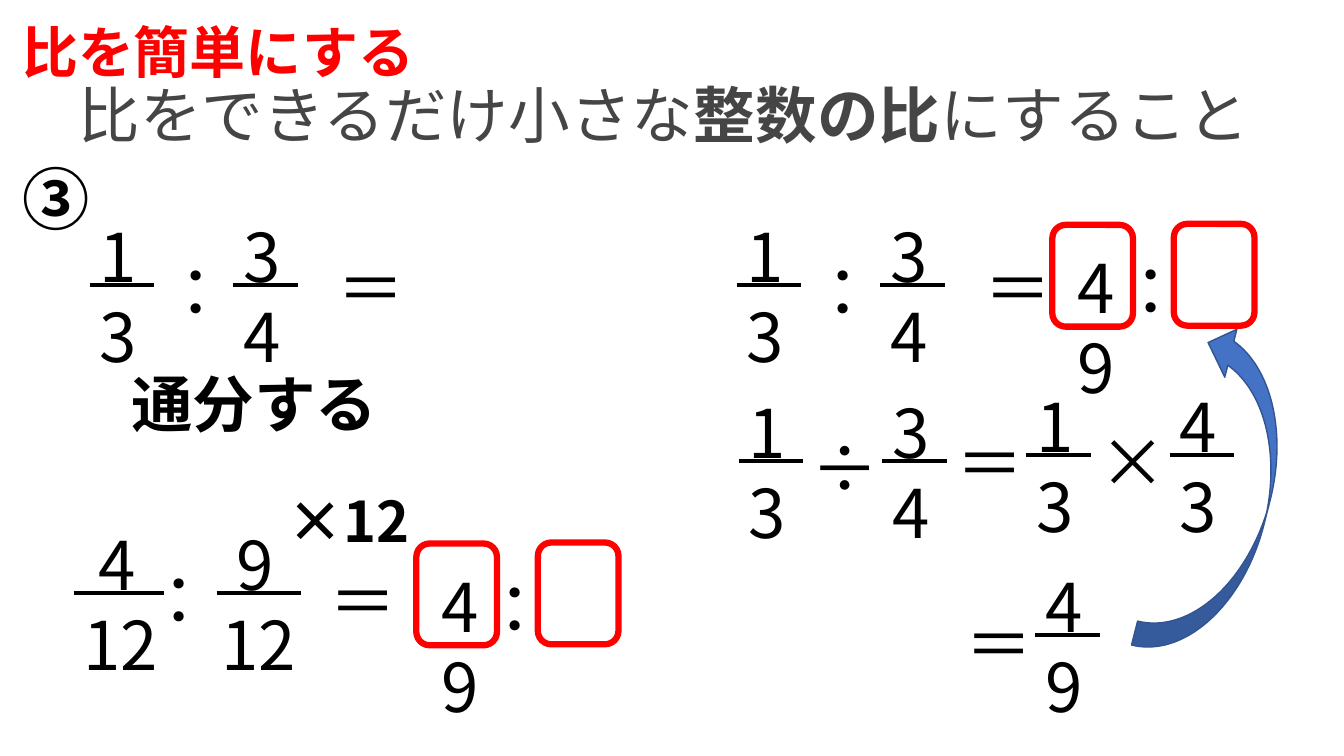
from dataclasses import dataclass

from pptx import Presentation
from pptx.dml.color import RGBColor
from pptx.enum.shapes import MSO_CONNECTOR as Connector, MSO_SHAPE as Preset
from pptx.enum.text import MSO_ANCHOR as Anchor, MSO_AUTO_SIZE as AutoSize, PP_ALIGN as Align
from pptx.oxml.ns import qn
from pptx.util import Pt
from lxml.etree import SubElement


@dataclass(frozen=True)
class Theme:
    """Colours, fonts and sizes of the slide."""
    ink: str = "000000"
    grey: str = "454545"
    red: str = "FF0000"
    white: str = "FFFFFF"
    blue: str = "4472C4"
    dark_blue: str = "325491"
    main_font: str = "Noto Sans CJK JP"
    lead_font: str = "Open Sans"
    math_size: float = 48
    lead_size: float = 44
    title_size: float = 40
    leading: float = 1.19
    drop: float = 0.1
    bar_width: float = 3
    frame_width: float = 4.5


THEME = Theme()


def add_run(paragraph, text, size, color, bold, font):
    """Append one formatted run."""
    run = paragraph.add_run()
    run.text = text
    run.font.size = Pt(size)
    run.font.bold = bold
    run.font.name = font
    run.font.color.rgb = RGBColor.from_string(color)
    SubElement(run.font._element, qn("a:ea")).set("typeface", font)


def fill_frame(frame, lines, size, color=THEME.ink, font=THEME.main_font,
               drop=THEME.drop, indent=0):
    """Write lines of (text, bold) runs; the indent moves the first line."""
    frame.word_wrap = True
    frame.auto_size = AutoSize.NONE
    frame.vertical_anchor = Anchor.TOP
    frame.margin_left = frame.margin_right = Pt(7.2)
    frame.margin_top, frame.margin_bottom = Pt(3.6 + size * drop), Pt(0)
    for number, runs in enumerate(lines):
        paragraph = frame.add_paragraph() if number else frame.paragraphs[0]
        paragraph.alignment = Align.LEFT
        paragraph.line_spacing = Pt(round(size * THEME.leading, 1))
        paragraph.space_before = paragraph.space_after = Pt(0)
        if indent and not number:
            paragraph._p.get_or_add_pPr().set("indent", str(Pt(indent)))
        for text, bold in runs:
            add_run(paragraph, text, size, color, bold, font)


def add_text(slide, left, top, width, height, lines, size, **style):
    """Add a text box."""
    shape = slide.shapes.add_textbox(Pt(left), Pt(top), Pt(width), Pt(height))
    fill_frame(shape.text_frame, lines, size, **style)


def add_symbol(slide, left, top, symbol):
    """Add one operator sign."""
    add_text(slide, left, top, 57.6, 65.5, [[(symbol, False)]], THEME.math_size)


def add_stack(slide, left, top, numbers, width=46, indent=0):
    """Add two numbers, one above the other."""
    lines = [[(number, False)] for number in numbers]
    add_text(slide, left, top, width, 124, lines, THEME.math_size, indent=indent)


def add_bar(slide, left, top, width=46):
    """Add a fraction bar."""
    bar = slide.shapes.add_connector(
        Connector.STRAIGHT, Pt(left), Pt(top), Pt(left + width), Pt(top))
    bar.line.color.rgb = RGBColor.from_string(THEME.ink)
    bar.line.width = Pt(THEME.bar_width)
    SubElement(bar._element.spPr, qn("a:effectLst"))


def add_fraction(slide, left, top, numbers):
    """Add a fraction with single digits."""
    add_stack(slide, left, top, numbers)
    add_bar(slide, left, top + 57.6)


def add_expression(slide, left, top, first, sign, second, equals=None):
    """Add two fractions joined by a sign, with an equals sign at an offset."""
    add_fraction(slide, left, top, first)
    add_symbol(slide, left + 45, top + 25, sign)
    add_fraction(slide, left + 102.5, top, second)
    if equals:
        add_symbol(slide, left + equals, top + 21.6, "＝")


def add_twelfths(slide, left, top):
    """Add the ratio over the common denominator."""
    for offset, number, bar_left, bar_width in ((0, "4", 0, 64.4), (98.6, "9", 102.2, 60)):
        add_stack(slide, left + offset, top, (number, "12"), 81.4, 10.75)
        add_bar(slide, left + bar_left, top + 57.6, bar_width)
    add_symbol(slide, left + 44.6, top + 25.2, "：")
    add_symbol(slide, left + 175.7, top + 26, "＝")


def style_shape(shape, fill, line, width):
    """Set fill and outline and drop the shadow."""
    shape.shadow.inherit = False
    shape.fill.solid()
    shape.fill.fore_color.rgb = RGBColor.from_string(fill)
    shape.line.color.rgb = RGBColor.from_string(line)
    shape.line.width = Pt(width)


def add_answer(slide, left, top):
    """Add the two framed places of the answer ratio."""
    for offset, lift in ((0, 0), (86.8, 0.7)):
        frame = slide.shapes.add_shape(
            Preset.ROUNDED_RECTANGLE, Pt(left + offset), Pt(top - lift), Pt(57.6), Pt(72.7))
        style_shape(frame, THEME.white, THEME.red, THEME.frame_width)
    add_symbol(slide, left + 39.2, top + 9.4, "：")
    add_stack(slide, left + 11.2, top + 7.6, ("4", "9"), 132.5)


def add_heading(slide, left, top):
    """Add the title, the definition and the exercise number."""
    title = slide.shapes.title
    title.left, title.top, title.width, title.height = Pt(left), Pt(top), Pt(405), Pt(55.4)
    fill_frame(title.text_frame, [[("比を簡単にする", True)]], THEME.title_size, THEME.red)
    definition = [("比をできるだけ小さな", False), ("整数の比", True), ("にすること", False)]
    add_text(slide, left + 40.4, top + 44.7, 869.8, 60.5, [definition], THEME.lead_size,
             color=THEME.grey, font=THEME.lead_font, drop=0.04)
    add_text(slide, left + 0.7, top + 99.4, 79, 65.5, [[("③", True)]], THEME.math_size)


def add_common_denominator(slide, left, top):
    """Add the left solution."""
    add_expression(slide, left, top, "13", "：", "34", 170)
    add_text(slide, left + 22.4, top + 107.4, 226, 60.5, [[("通分する", True)]], THEME.lead_size)
    add_twelfths(slide, left - 11.5, top + 219.6)
    add_text(slide, left + 134, top + 193.8, 111.6, 55.4, [[("×12", True)]], THEME.title_size)
    add_answer(slide, left + 233.3, top + 242)


def add_division(slide, left, top):
    """Add the right solution and its arrow."""
    add_expression(slide, left, top, "13", "：", "34", 170)
    add_expression(slide, left + 1.5, top + 125.3, "13", "÷", "34", 148.5)
    add_expression(slide, left + 206.7, top + 121, "13", "×", "43")
    add_symbol(slide, left + 156.3, top + 275.8, "＝")
    add_fraction(slide, left + 213.2, top + 250, "49")
    arrow = slide.shapes.add_shape(
        Preset.CURVED_LEFT_ARROW, Pt(left + 310.4), Pt(top + 86.4), Pt(70.6), Pt(240.5))
    style_shape(arrow, THEME.blue, THEME.dark_blue, 1)
    arrow.rotation = 14.2
    arrow._element.spPr.find(qn("a:xfrm")).set("flipV", "1")
    add_answer(slide, left + 225.4, top + 14.4)


def main():
    """Build and save the slide."""
    presentation = Presentation()
    presentation.slide_width, presentation.slide_height = Pt(960), Pt(540)
    slide = presentation.slides.add_slide(presentation.slide_layouts[5])
    add_heading(slide, 8.6, 5)
    add_common_denominator(slide, 64.1, 146.2)
    add_division(slide, 526.3, 146.2)
    presentation.save("out.pptx")


if __name__ == "__main__":
    main()
